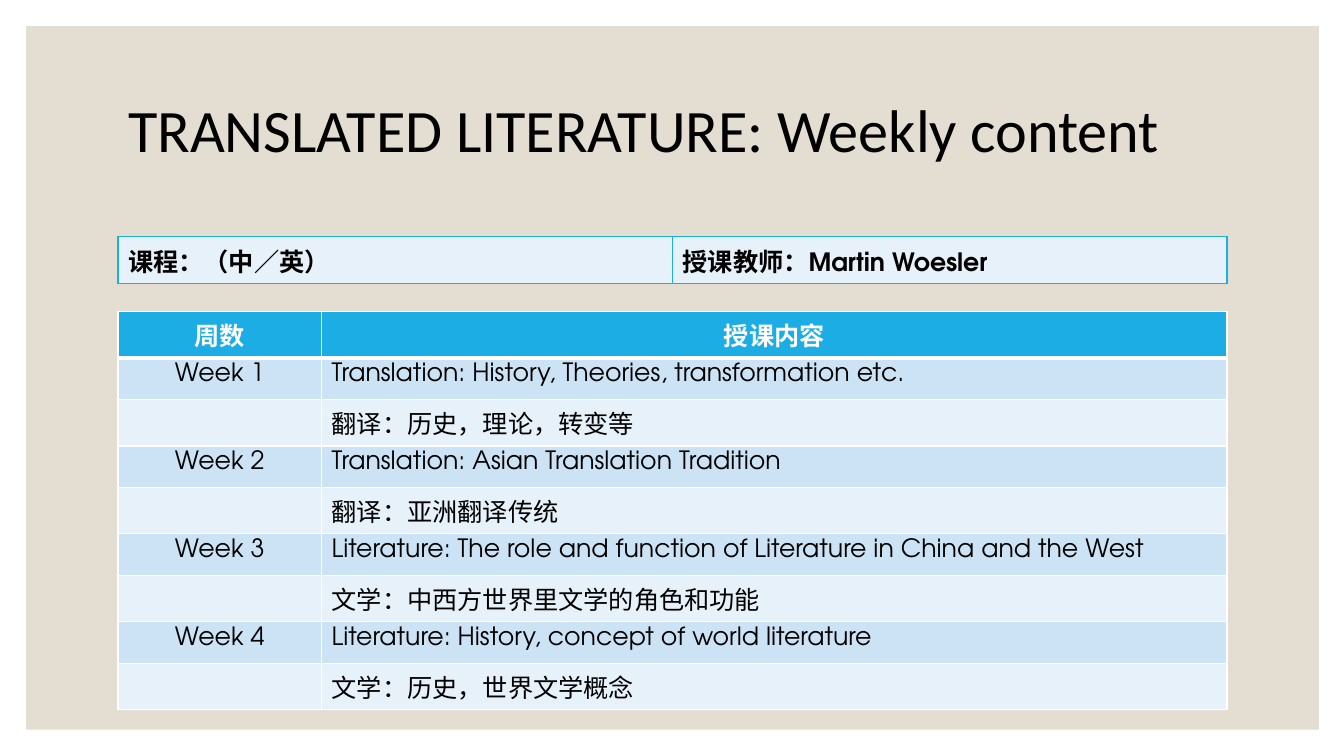
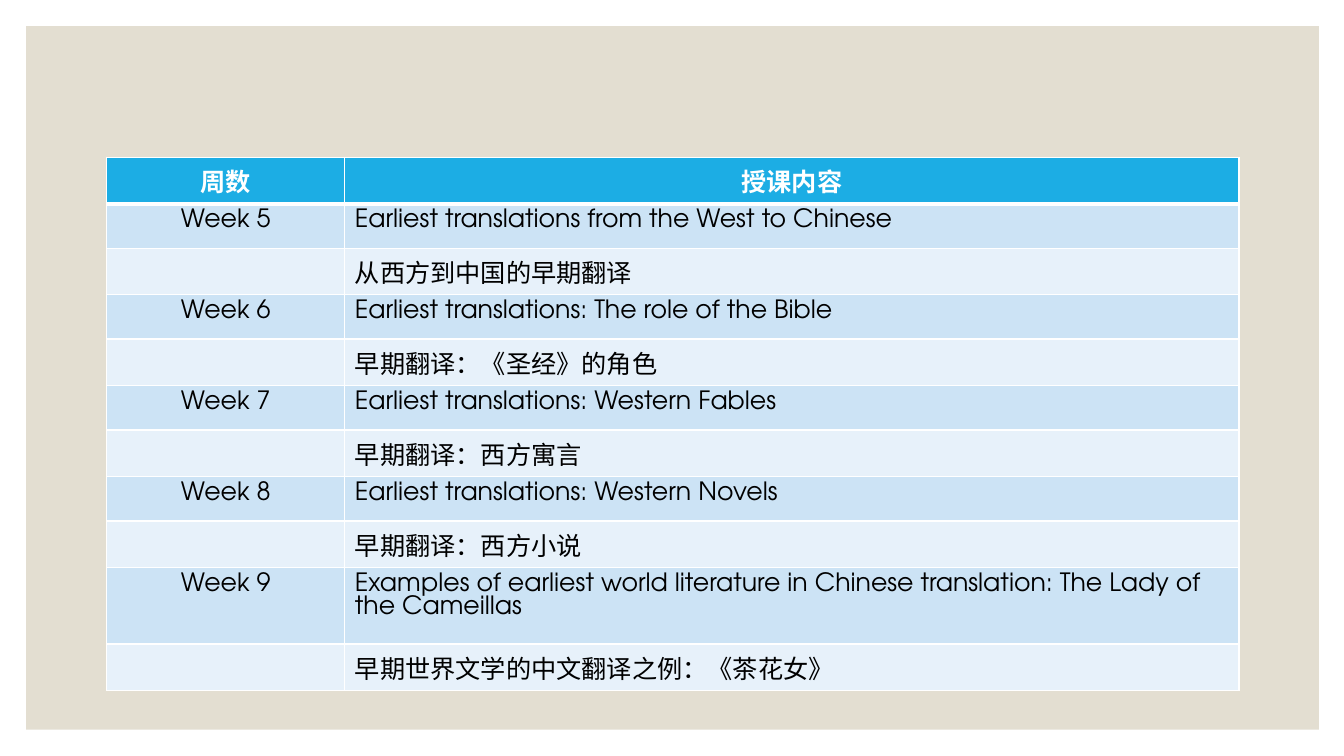
from pptx import Presentation
from pptx.dml.color import RGBColor
from pptx.enum.shapes import MSO_SHAPE as Shape
from pptx.enum.text import MSO_ANCHOR as Anchor, PP_ALIGN as Align
from pptx.oxml.ns import qn
from pptx.util import Pt
from lxml.etree import SubElement

EMU_PER_PX = 9144  # 100 px to the inch
TITLE_ONLY, BLANK = 5, 6


def px(length):
    return length * EMU_PER_PX


def color(hex_string):
    return RGBColor.from_string(hex_string)


def write(frame, text, size=18, font="TeX Gyre Adventor", ink="000000",
          bold=False, align=Align.LEFT, spacing=None):
    """Put one formatted paragraph into a text frame."""
    frame.word_wrap = True
    paragraph = frame.paragraphs[0]
    paragraph.alignment = align
    if spacing:
        paragraph.line_spacing = spacing
    if text:
        run = paragraph.add_run()
        run.text = text
        run.font.name = font
        run.font.size = Pt(size)
        run.font.bold = bold
        run.font.color.rgb = color(ink)


class Deck:
    """The shared style and the current slide."""
    PAPER, PANEL, ACCENT = "FFFFFF", "E3DED1", "1CADE4"
    BANDS = ("CCE3F5", "E7F1FA")
    HEADINGS = ("周数", "授课内容")

    def __init__(self):
        self.presentation = Presentation()
        self.presentation.slide_width = px(1333)
        self.presentation.slide_height = px(750)
        self.slide = None

    def add_slide(self, layout):
        layouts = self.presentation.slide_layouts
        self.slide = self.presentation.slides.add_slide(layouts[layout])
        panel = self.slide.shapes.add_shape(
            Shape.RECTANGLE, px(26), px(26), px(1282), px(698))
        panel.shadow.inherit = False
        panel.fill.solid()
        panel.fill.fore_color.rgb = color(self.PANEL)
        panel.line.fill.background()
        # Send the panel behind the title
        self.slide.shapes.element.insert(2, panel.element)

    def title(self, text):
        title = self.slide.shapes.title
        title.left, title.top = px(117), px(57)
        title.width, title.height = px(1100), px(150)
        title.text_frame.vertical_anchor = Anchor.MIDDLE
        write(title.text_frame, text, size=43, font="Calibri", spacing=0.9)

    def table(self, left, top, columns, rows):
        frame = self.slide.shapes.add_table(
            len(rows), len(columns), px(left), px(top),
            px(sum(columns)), px(sum(rows)))
        table = frame.table
        table.first_row = table.horz_banding = False
        for column, width in zip(table.columns, columns):
            column.width = px(width)
        for row, height in zip(table.rows, rows):
            row.height = px(height)
        return table

    def cell(self, cell, text, fill, border, top=1, bottom=1, **style):
        cell.margin_left = cell.margin_right = px(10)
        cell.margin_top = cell.margin_bottom = px(5)
        write(cell.text_frame, text, **style)
        # Borders come before the fill in the cell properties
        properties = cell._tc.get_or_add_tcPr()
        for side, width in (("L", 1), ("R", 1), ("T", top), ("B", bottom)):
            line = SubElement(properties, qn(f"a:ln{side}"), w=str(int(Pt(width))))
            solid = SubElement(line, qn("a:solidFill"))
            SubElement(solid, qn("a:srgbClr"), val=border)
        cell.fill.solid()
        cell.fill.fore_color.rgb = color(fill)

    def course_bar(self, left, top, width, height, texts):
        columns = [width // len(texts)] * len(texts)
        table = self.table(left, top, columns, [height])
        for cell, text in zip(table.iter_cells(), texts):
            self.cell(cell, text, self.BANDS[1], self.ACCENT, bold=True)

    def schedule(self, left, top, columns, rows, first_week, topics):
        """A heading row, then an English and a Chinese row for each week."""
        table = self.table(left, top, columns, rows)
        for column, heading in enumerate(self.HEADINGS):
            self.cell(table.cell(0, column), heading, self.ACCENT, self.PAPER,
                      bottom=3, ink=self.PAPER, bold=True, align=Align.CENTER)
        for index, topic in enumerate(topics):
            labels = (f"Week {first_week + index}", "")
            for offset, (label, text) in enumerate(zip(labels, topic)):
                row = 1 + 2 * index + offset
                band, rule = self.BANDS[offset], 3 if row == 1 else 1
                self.cell(table.cell(row, 0), label, band, self.PAPER,
                          top=rule, align=Align.CENTER)
                self.cell(table.cell(row, 1), text, band, self.PAPER, top=rule)


def main():
    deck = Deck()

    # Weeks 1 to 4
    deck.add_slide(TITLE_ONLY)
    deck.title("TRANSLATED LITERATURE: Weekly content")
    deck.course_bar(117, 235, 1100, 40,
                    ("课程：（中／英）", "授课教师：Martin Woesler"))
    deck.schedule(117, 309, (202, 898), [41] * 9, 1, (
        ("Translation: History, Theories, transformation etc.",
         "翻译：历史，理论，转变等"),
        ("Translation: Asian Translation Tradition",
         "翻译：亚洲翻译传统"),
        ("Literature: The role and function of Literature in China and the West",
         "文学：中西方世界里文学的角色和功能"),
        ("Literature: History, concept of world literature",
         "文学：历史，世界文学概念"),
    ))

    # Weeks 5 to 9
    deck.add_slide(BLANK)
    deck.schedule(106, 156, (236, 887), [44] * 9 + [76, 44], 5, (
        ("Earliest translations from the West to Chinese",
         "从西方到中国的早期翻译"),
        ("Earliest translations: The role of the Bible",
         "早期翻译：《圣经》的角色"),
        ("Earliest translations: Western Fables",
         "早期翻译：西方寓言"),
        ("Earliest translations: Western Novels",
         "早期翻译：西方小说"),
        ("Examples of earliest world literature in Chinese translation: "
         "The Lady of the Cameillas",
         "早期世界文学的中文翻译之例：《茶花女》"),
    ))

    deck.presentation.save("out.pptx")


if __name__ == "__main__":
    main()
